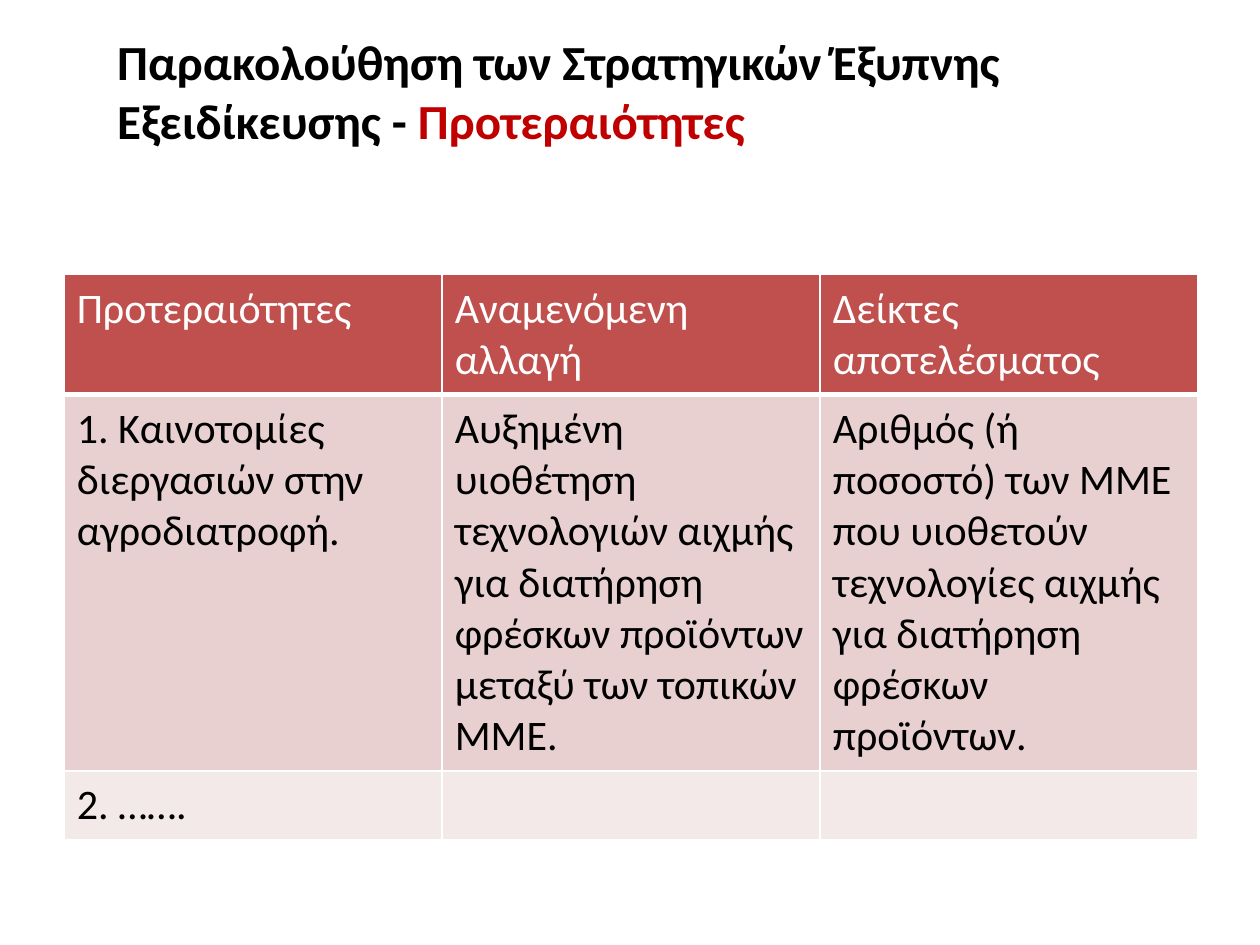
import pptx
import pptx.dml.color
import pptx.enum.text
import pptx.oxml
import pptx.oxml.ns
import pptx.util
from pptx.util import Inches

BLACK, WHITE = "000000", "FFFFFF"
ACCENT, HEADER = "C00000", "C0504D"
BANDS = ["E8D0D0", "F4E9E9"]


def rgb(value):
    return pptx.dml.color.RGBColor.from_string(value)


def add_text(p, text, font="Calibri", size=24, color=BLACK, bold=False):
    r = p.add_run()
    r.text = text
    r.font.name = font
    r.font.size = pptx.util.Pt(size)
    r.font.bold = bold
    r.font.color.rgb = rgb(color)


class SlideBuilder:
    def __init__(self, prs):
        self.slide = prs.slides.add_slide(prs.slide_layouts[5])

    def title(self, left, top, width, height, parts):
        sp = self.slide.shapes.title
        sp.left, sp.top, sp.width, sp.height = left, top, width, height
        tf = sp.text_frame
        tf.word_wrap = True
        tf.auto_size = pptx.enum.text.MSO_AUTO_SIZE.NONE
        tf.vertical_anchor = pptx.enum.text.MSO_ANCHOR.TOP
        tf.margin_top = 0
        p = tf.paragraphs[0]
        p.alignment = pptx.enum.text.PP_ALIGN.LEFT
        for text, color in parts:
            add_text(p, text, size=28, color=color, bold=True)

    def borders(self, cell, bottom):
        tcPr = cell._tc.get_or_add_tcPr()
        widths = {"lnL": 1, "lnR": 1, "lnT": 1, "lnB": bottom}
        # Border lines come before the fill in the cell properties
        for i, (tag, width) in enumerate(widths.items()):
            tcPr.insert(i, pptx.oxml.parse_xml(
                f'<a:{tag} {pptx.oxml.ns.nsdecls("a")} w="{pptx.util.Pt(width)}">'
                f'<a:solidFill><a:srgbClr val="{WHITE}"/></a:solidFill></a:{tag}>'))

    def table(self, left, top, width, heights, rows):
        table = self.slide.shapes.add_table(
            len(rows), len(rows[0]), left, top, width, sum(heights)).table
        for i, row in enumerate(rows):
            table.rows[i].height = heights[i]
            for j, text in enumerate(row):
                cell = table.cell(i, j)
                cell.margin_top = cell.margin_bottom = Inches(0.07)
                cell.fill.solid()
                cell.fill.fore_color.rgb = rgb(BANDS[(i - 1) % 2] if i else HEADER)
                self.borders(cell, bottom=1 if i else 3)
                if text:
                    add_text(cell.text_frame.paragraphs[0], text,
                             color=BLACK if i else WHITE)


def main():
    prs = pptx.Presentation()
    prs.slide_width, prs.slide_height = Inches(10), Inches(7.5)
    s = SlideBuilder(prs)

    # Title
    s.title(Inches(0.83), Inches(0.25), Inches(8.83), Inches(1.25), [
        ("Παρακολούθηση των Στρατηγικών Έξυπνης Εξειδίκευσης - ", BLACK),
        ("Προτεραιότητες", ACCENT),
    ])

    # Priorities, expected change and result indicators
    s.table(Inches(0.51), Inches(2.18), Inches(9),
            [Inches(h) for h in (0.94, 2.98, 0.54)], [
        ["Προτεραιότητες", "Αναμενόμενη αλλαγή", "Δείκτες αποτελέσματος"],
        ["1. Καινοτομίες διεργασιών στην αγροδιατροφή.",
         "Αυξημένη υιοθέτηση τεχνολογιών αιχμής για διατήρηση φρέσκων "
         "προϊόντων μεταξύ των τοπικών ΜΜΕ.",
         "Αριθμός (ή ποσοστό) των ΜΜΕ που υιοθετούν τεχνολογίες αιχμής "
         "για διατήρηση φρέσκων προϊόντων."],
        ["2. …….", "", ""],
    ])

    prs.save("out.pptx")


if __name__ == "__main__":
    main()
